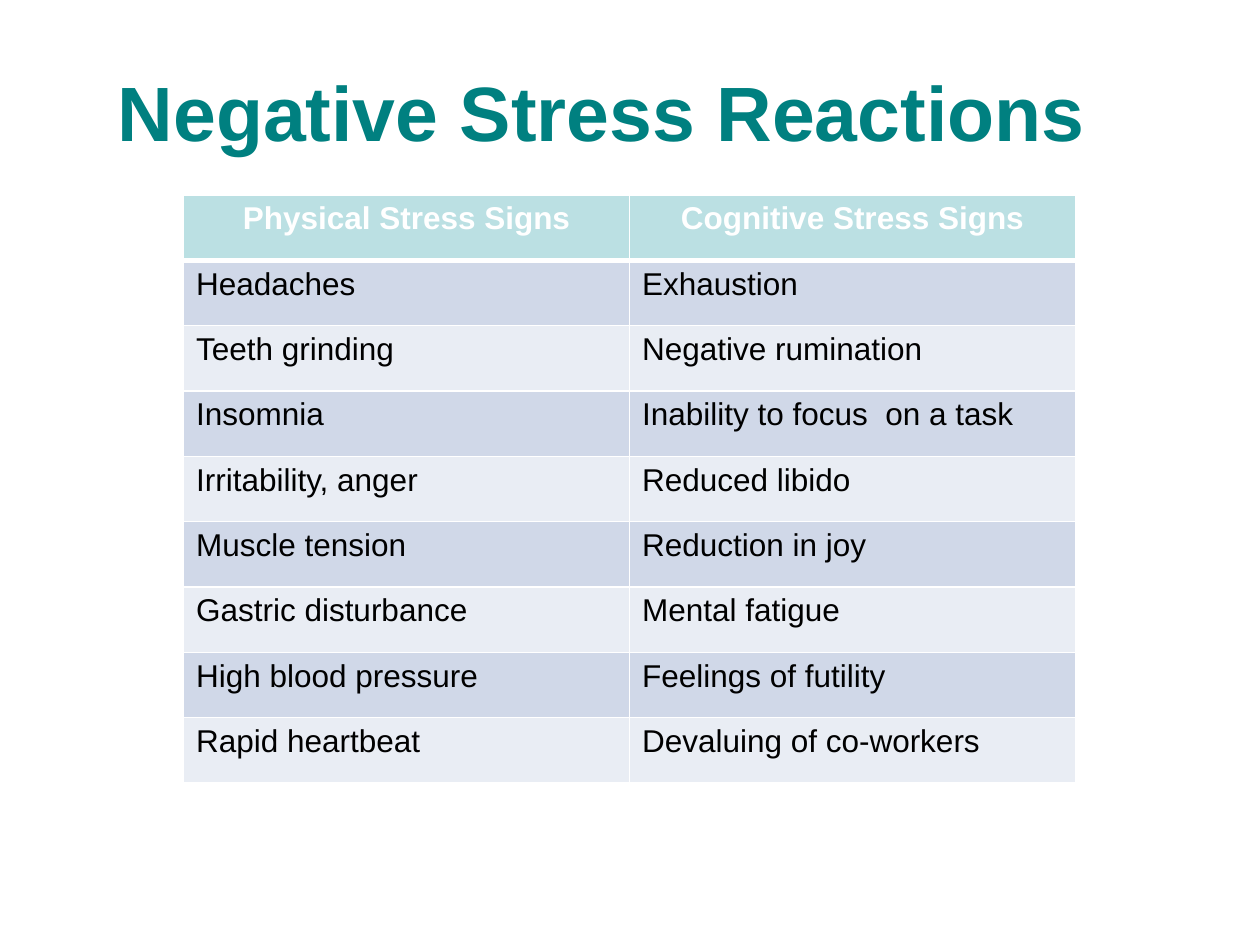
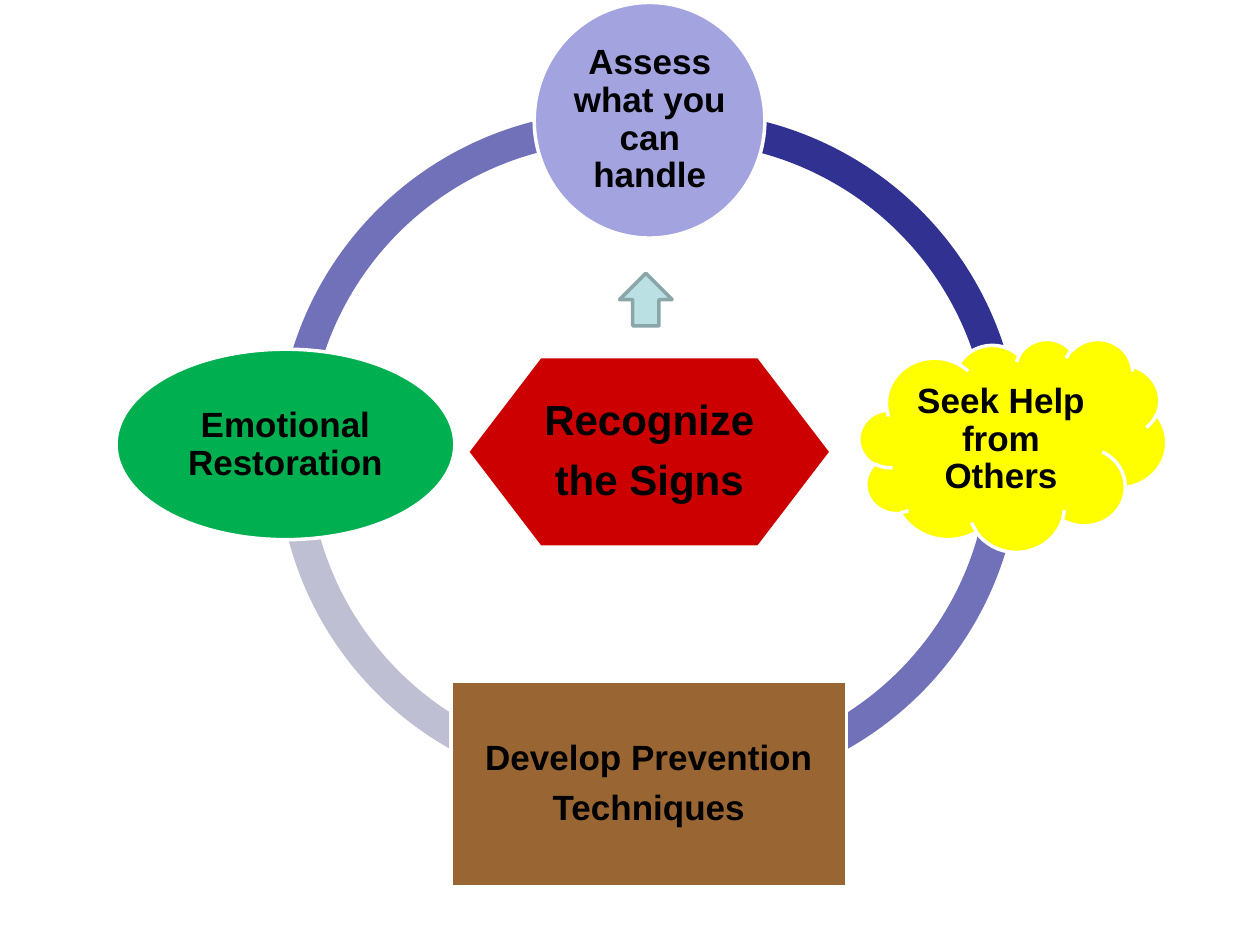
from collections import namedtuple

from lxml import etree
from pptx import Presentation
from pptx import util as u
from pptx.dml.color import RGBColor
from pptx.enum import shapes, text
from pptx.oxml import ns

FONT = "Arial"
TEAL = RGBColor(0x00, 0x80, 0x80)
WHITE = RGBColor(0xFF, 0xFF, 0xFF)
BLACK = RGBColor(0x00, 0x00, 0x00)
AQUA = RGBColor(0xBB, 0xE0, 0xE3)
AQUA_EDGE = RGBColor(0x8A, 0xA6, 0xA8)
BAND_DARK = RGBColor(0xD0, 0xD8, 0xE8)
BAND_LIGHT = RGBColor(0xE9, 0xED, 0xF4)
ARC_BLUE = RGBColor(0x71, 0x71, 0xBA)
ARC_PALE = RGBColor(0xBF, 0xBF, 0xD4)
ARC_NAVY = RGBColor(0x31, 0x31, 0x92)
RED = RGBColor(0xCC, 0x00, 0x00)
LILAC = RGBColor(0xA3, 0xA3, 0xE0)
YELLOW = RGBColor(0xFF, 0xFF, 0x00)
BROWN = RGBColor(0x99, 0x66, 0x33)
GREEN = RGBColor(0x00, 0xB0, 0x50)

LEFT, CENTER = text.PP_ALIGN.LEFT, text.PP_ALIGN.CENTER
TOP, MIDDLE = text.MSO_ANCHOR.TOP, text.MSO_ANCHOR.MIDDLE
KIND = shapes.MSO_SHAPE

Box = namedtuple("Box", "left top width height")
Arc = namedtuple("Arc", "left top start end color")
Node = namedtuple("Node", "kind color box text_box lines size")

SIGNS = [
    ("Physical Stress Signs", "Cognitive Stress Signs"),
    ("Headaches", "Exhaustion"),
    ("Teeth grinding", "Negative rumination"),
    ("Insomnia", "Inability to focus  on a task"),
    ("Irritability, anger", "Reduced libido"),
    ("Muscle tension", "Reduction in joy"),
    ("Gastric disturbance", "Mental fatigue"),
    ("High blood pressure", "Feelings of futility"),
    ("Rapid heartbeat", "Devaluing of co-workers"),
]

RING_SIZE = 13.69
RING_THICKNESS = 0.046
ARCS = [
    Arc(3.25, 2.19, 181, 275.47, ARC_BLUE),
    Arc(3.25, 2.24, 84.52, 181.53, ARC_PALE),
    Arc(4.54, 2.24, 358.48, 95.48, ARC_BLUE),
    Arc(4.54, 2.19, 264.53, 359, ARC_NAVY),
]
NODES = [
    Node(KIND.FLOWCHART_PREPARATION, RED, Box(7.08, 7.14, 7.34, 3.84),
         Box(1.25, 0, 4.84, 3.84), ["Recognize", "the Signs"], 24),
    Node(KIND.OVAL, LILAC, Box(8.43, 0, 4.65, 4.75),
         Box(0.69, 0.69, 3.28, 3.35), ["Assess what you can handle"], 20),
    Node(KIND.CLOUD, YELLOW, Box(14.98, 6.78, 6.2, 4.29),
         Box(0.84, 0.64, 4.04, 2.79), ["Seek Help from Others"], 20),
    Node(KIND.FLOWCHART_PROCESS, BROWN, Box(6.75, 13.69, 7.98, 4.14),
         Box(0, 0, 7.98, 4.14), ["Develop Prevention", "Techniques"], 20),
    Node(KIND.OVAL, GREEN, Box(0, 6.99, 6.83, 3.84),
         Box(1, 0.57, 4.83, 2.72), ["Emotional Restoration"], 20),
]


def inside(outer, inner):
    return Box(outer.left + inner.left, outer.top + inner.top,
               inner.width, inner.height)


def in_cm(box):
    return [u.Cm(length) for length in box]


def write(frame, lines, size, color=BLACK, bold=True, align=CENTER,
          anchor=MIDDLE, spacing=None, after=None, inset=None):
    frame.word_wrap = True
    frame.vertical_anchor = anchor
    if inset is not None:
        frame.margin_left = frame.margin_right = u.Cm(inset)
        frame.margin_top = frame.margin_bottom = u.Cm(inset)
    for index, line in enumerate(lines):
        para = frame.add_paragraph() if index else frame.paragraphs[0]
        para.alignment = align
        if spacing:
            para.line_spacing = spacing
        if after:
            para.space_after = u.Pt(after)
        span = para.add_run()
        span.text = line
        span.font.name = FONT
        span.font.size = u.Pt(size)
        span.font.bold = bold
        span.font.color.rgb = color


def add_figure(holder, kind, box, color, edge=None):
    figure = holder.add_shape(kind, *in_cm(box))
    figure.shadow.inherit = False
    figure.fill.solid()
    figure.fill.fore_color.rgb = color
    if edge is None:
        figure.line.fill.background()
    else:
        figure.line.color.rgb = edge
        figure.line.width = u.Pt(2)
    return figure


def add_title(page, box, title):
    holder = page.shapes.title
    holder.left, holder.top, holder.width, holder.height = in_cm(box)
    write(holder.text_frame, [title], 44, color=TEAL)


def set_borders(cell, widths):
    properties = cell._tc.get_or_add_tcPr()
    for index, (side, width) in enumerate(widths.items()):
        line = etree.Element(ns.qn(f"a:ln{side}"), w=str(u.Pt(width)))
        fill = etree.SubElement(line, ns.qn("a:solidFill"))
        etree.SubElement(fill, ns.qn("a:srgbClr"), val=str(WHITE))
        properties.insert(index, line)


def add_signs_table(page, box, rows):
    table = page.shapes.add_table(len(rows), len(rows[0]), *in_cm(box)).table
    for column in table.columns:
        column.width = u.Cm(box.width / len(rows[0]))
    for number, words in enumerate(rows):
        table.rows[number].height = u.Cm(box.height / len(rows))
        header = number == 0
        band = BAND_DARK if number % 2 else BAND_LIGHT
        borders = {"L": 1, "R": 1, "T": 3 if number == 1 else 1,
                   "B": 3 if header else 1}
        for cell, word in zip(table.rows[number].cells, words):
            cell.fill.solid()
            cell.fill.fore_color.rgb = AQUA if header else band
            cell.vertical_anchor = TOP
            write(cell.text_frame, [word], 18, bold=header, anchor=TOP,
                  color=WHITE if header else BLACK,
                  align=CENTER if header else LEFT)
            set_borders(cell, borders)


def add_arc(holder, box, arc):
    place = inside(box, Box(arc.left, arc.top, RING_SIZE, RING_SIZE))
    figure = add_figure(holder, KIND.BLOCK_ARC, place, arc.color)
    figure.adjustments[0] = arc.start * 0.6
    figure.adjustments[1] = arc.end * 0.6
    figure.adjustments[2] = RING_THICKNESS


def add_node(holder, box, node):
    place = inside(box, node.box)
    add_figure(holder, node.kind, place, node.color, edge=WHITE)
    label = holder.add_textbox(*in_cm(inside(place, node.text_box)))
    write(label.text_frame, node.lines, node.size, spacing=0.9,
          after=node.size * 0.35, inset=0.08)


def add_cycle(page, box):
    cycle = page.shapes.add_group_shape().shapes
    for arc in ARCS:
        add_arc(cycle, box, arc)
    for node in NODES:
        add_node(cycle, box, node)
    arrow = inside(box, Box(10.15, 5.46, 1.06, 1.06))
    add_figure(page.shapes, KIND.UP_ARROW, arrow, AQUA, edge=AQUA_EDGE)


def add_page(deck, layout_name):
    page = deck.slides.add_slide(deck.slide_layouts.get_by_name(layout_name))
    page.background.fill.solid()
    page.background.fill.fore_color.rgb = WHITE
    return page


def main():
    deck = Presentation()
    deck.slide_width, deck.slide_height = u.Cm(25.4), u.Cm(19.05)

    reactions = add_page(deck, "Title Only")
    add_title(reactions, Box(0.7, 0.33, 22.86, 3.81),
              "Negative Stress Reactions")
    add_signs_table(reactions, Box(3.7, 3.93, 17.98, 11.86), SIGNS)

    add_cycle(add_page(deck, "Blank"), Box(2.34, 0.05, 21.18, 17.83))

    deck.save("out.pptx")


if __name__ == "__main__":
    main()
